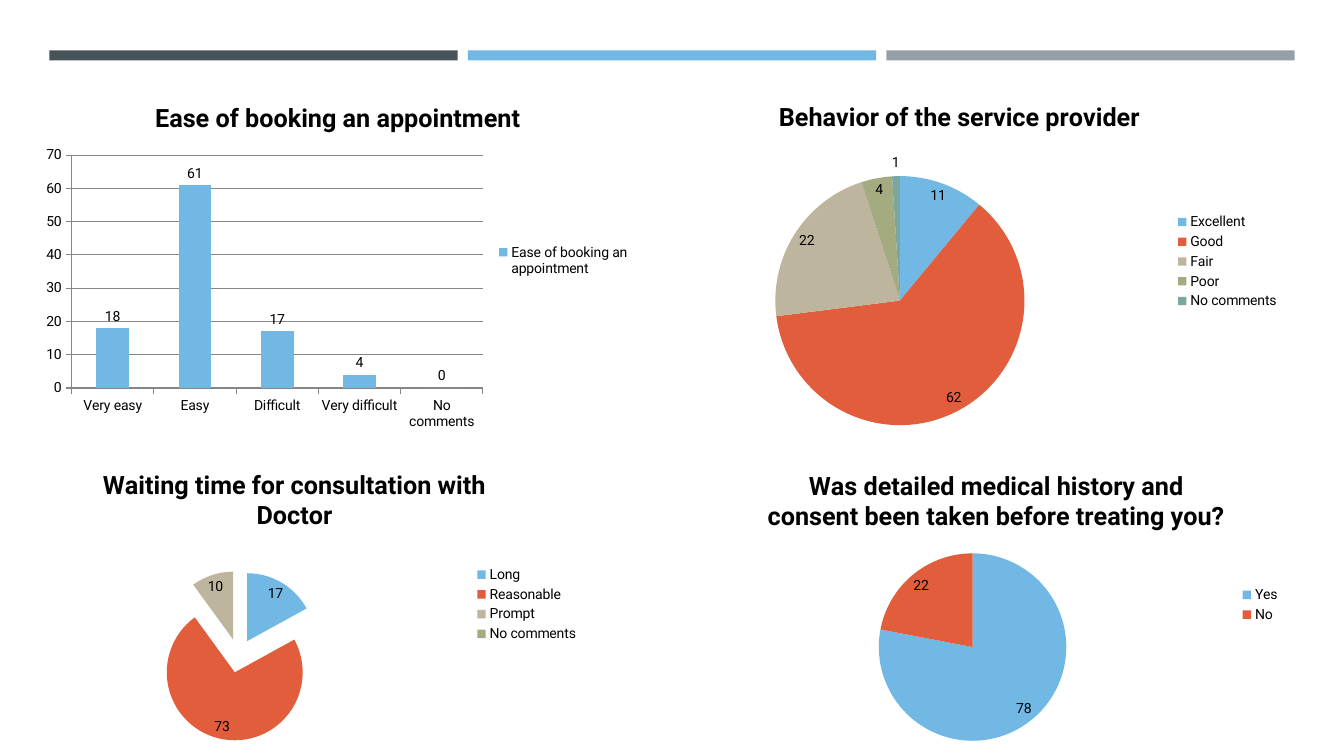
import pptx
import pptx.chart.data
import pptx.dml.color
import pptx.enum.chart
import pptx.enum.shapes
import pptx.oxml
import pptx.oxml.ns
import pptx.util

Inches = pptx.util.Inches
Pt = pptx.util.Pt
RGBColor = pptx.dml.color.RGBColor
ChartType = pptx.enum.chart.XL_CHART_TYPE
LabelPosition = pptx.enum.chart.XL_LABEL_POSITION

BLACK = RGBColor(0x00, 0x00, 0x00)
AXIS_GRAY = RGBColor(0x86, 0x86, 0x86)
SLATE = RGBColor(0x46, 0x53, 0x59)
SILVER = RGBColor(0x96, 0x9F, 0xA7)
BLUE = RGBColor(0x71, 0xB9, 0xE4)
RED = RGBColor(0xE2, 0x5D, 0x3C)
SAND = RGBColor(0xBD, 0xB5, 0x9D)
OLIVE = RGBColor(0xA5, 0xAB, 0x81)
TEAL = RGBColor(0x7B, 0xA7, 0x9D)
SLICE_COLORS = (BLUE, RED, SAND, OLIVE, TEAL)


class SurveySlide:
    font_name = "Roboto"
    title_size = Pt(18)
    text_size = Pt(10)

    def __init__(self, presentation):
        self.slide = presentation.slides.add_slide(presentation.slide_layouts[6])

    def add_bar(self, left, color):
        shape = self.slide.shapes.add_shape(
            pptx.enum.shapes.MSO_SHAPE.RECTANGLE,
            Inches(left), Inches(0.5), Inches(4.05), Inches(0.1))
        shape.shadow.inherit = False
        shape.fill.solid()
        shape.fill.fore_color.rgb = color
        shape.line.fill.background()

    def style_font(self, font, size, bold=False):
        font.name = self.font_name
        font.size = size
        font.bold = bold
        font.color.rgb = BLACK

    def place_plot(self, chart, plot_box):
        plot_area = chart.plots[0]._element.getparent()
        for layout in plot_area.findall(pptx.oxml.ns.qn("c:layout")):
            plot_area.remove(layout)
        modes = '<c:layoutTarget val="inner"/><c:xMode val="edge"/><c:yMode val="edge"/>'
        sizes = "".join(f'<c:{name} val="{value}"/>' for name, value in zip("xywh", plot_box))
        plot_area.insert(0, pptx.oxml.parse_xml(
            f'<c:layout {pptx.oxml.ns.nsdecls("c")}><c:manualLayout>'
            f'{modes}{sizes}</c:manualLayout></c:layout>'))

    def add_chart(self, kind, box, plot_box, title, series_name, answers, label_position):
        data = pptx.chart.data.CategoryChartData()
        data.categories = list(answers)
        data.add_series(series_name, list(answers.values()))
        chart = self.slide.shapes.add_chart(kind, *map(Inches, box), data).chart
        self.style_font(chart.font, self.text_size)

        chart.has_title = True
        run = chart.chart_title.text_frame.paragraphs[0].add_run()
        run.text = title
        self.style_font(run.font, self.title_size, True)
        chart.chart_title.include_in_layout = False

        chart.has_legend = True
        chart.legend.position = pptx.enum.chart.XL_LEGEND_POSITION.RIGHT
        chart.legend.include_in_layout = False
        self.style_font(chart.legend.font, self.text_size)

        plot = chart.plots[0]
        plot.has_data_labels = True
        labels = plot.data_labels
        labels.show_value = True
        labels.position = label_position
        self.style_font(labels.font, self.text_size)
        self.place_plot(chart, plot_box)
        return chart

    def add_column_chart(self, box, plot_box, title, answers):
        chart = self.add_chart(ChartType.COLUMN_CLUSTERED, box, plot_box, title, title,
                               answers, LabelPosition.OUTSIDE_END)
        plot = chart.plots[0]
        plot.vary_by_categories = False
        plot.gap_width = 150
        series = plot.series[0]
        series.format.fill.solid()
        series.format.fill.fore_color.rgb = BLUE

        value_axis = chart.value_axis
        value_axis.minimum_scale = 0
        value_axis.maximum_scale = 70
        value_axis.major_unit = 10
        value_axis.has_major_gridlines = True
        for line in (value_axis.major_gridlines.format.line,
                     value_axis.format.line, chart.category_axis.format.line):
            line.color.rgb = AXIS_GRAY
            line.width = Pt(0.75)
        for axis in (value_axis, chart.category_axis):
            axis.major_tick_mark = pptx.enum.chart.XL_TICK_MARK.OUTSIDE
            self.style_font(axis.tick_labels.font, self.text_size)

    def add_pie_chart(self, box, plot_box, title, answers, series_name=None, explosion=0):
        chart = self.add_chart(ChartType.PIE, box, plot_box, title, series_name or title,
                               answers, LabelPosition.BEST_FIT)
        plot = chart.plots[0]
        plot.vary_by_categories = True
        plot.data_labels.number_format = "0;;;"
        plot.data_labels.number_format_is_linked = False
        series = plot.series[0]
        for index, color in enumerate(SLICE_COLORS[:len(answers)]):
            fill = series.points[index].format.fill
            fill.solid()
            fill.fore_color.rgb = color
        if explosion:
            first_point = series._element.find(pptx.oxml.ns.qn("c:dPt"))
            first_point.addprevious(pptx.oxml.parse_xml(
                f'<c:explosion {pptx.oxml.ns.nsdecls("c")} val="{explosion}"/>'))
            for point in series._element.findall(pptx.oxml.ns.qn("c:dPt")):
                point.find(pptx.oxml.ns.qn("c:spPr")).addprevious(pptx.oxml.parse_xml(
                    f'<c:explosion {pptx.oxml.ns.nsdecls("c")} val="{explosion}"/>'))


def main():
    presentation = pptx.Presentation()
    presentation.slide_width = Inches(13.33)
    presentation.slide_height = Inches(7.5)
    survey = SurveySlide(presentation)

    for index, color in enumerate((SLATE, BLUE, SILVER)):
        survey.add_bar(0.49 + 4.15 * index, color)

    survey.add_column_chart(
        (0.35, 0.84, 6, 3.5), (0.06, 0.2, 0.68, 0.66),
        "Ease of booking an appointment",
        {"Very easy": 18, "Easy": 61, "Difficult": 17, "Very difficult": 4, "No comments": 0})
    survey.add_pie_chart(
        (6.24, 0.83, 6.55, 3.53), (0.22, 0.26, 0.38, 0.7),
        "Behavior of the service provider",
        {"Excellent": 11, "Good": 62, "Fair": 22, "Poor": 4, "No comments": 1},
        series_name="Series 1")
    survey.add_pie_chart(
        (0, 4.49, 5.84, 3.01), (0.26, 0.39, 0.29, 0.56),
        "Waiting time for consultation with Doctor",
        {"Long": 17, "Reasonable": 73, "Prompt": 10, "No comments": 0},
        explosion=25)
    survey.add_pie_chart(
        (6.96, 4.5, 5.84, 3), (0.3, 0.33, 0.32, 0.62),
        "Was detailed medical history and consent been taken before treating you?",
        {"Yes": 78, "No": 22})

    presentation.save("out.pptx")


if __name__ == "__main__":
    main()
